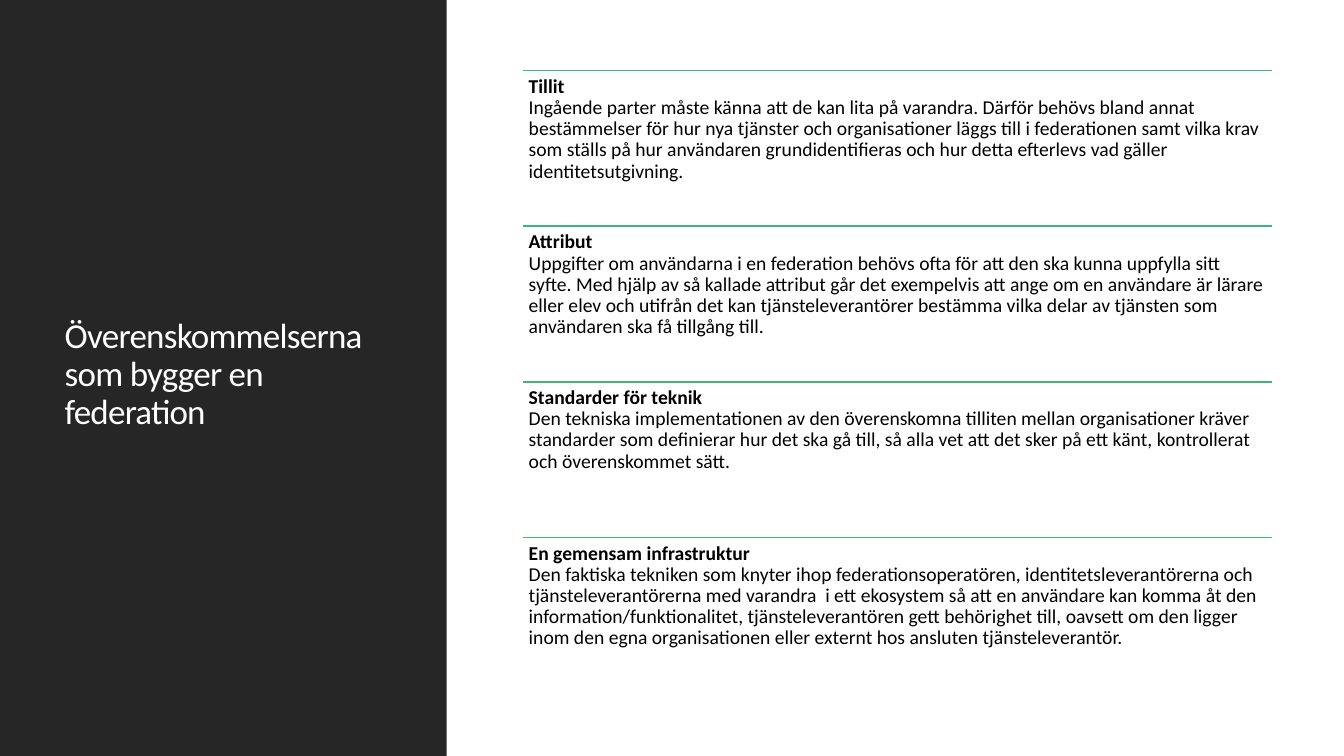
from dataclasses import dataclass

from lxml.etree import SubElement
from pptx import Presentation
from pptx.dml.color import RGBColor
from pptx.enum.shapes import MSO_CONNECTOR as Connector, MSO_SHAPE as Shape
from pptx.enum.text import MSO_ANCHOR as Anchor, MSO_AUTO_SIZE as AutoSize, PP_ALIGN as Align
from pptx.oxml.ns import qn
from pptx.util import Pt


@dataclass(frozen=True)
class Theme:
    font: str = "Calibri"
    dark: RGBColor = RGBColor.from_string("262626")
    white: RGBColor = RGBColor.from_string("FFFFFF")
    black: RGBColor = RGBColor.from_string("000000")
    rules: tuple = ("3BB192", "3FB284", "43B477", "47B56A")
    title_size: Pt = Pt(25)
    body_size: Pt = Pt(14)


theme = Theme()

agreements = [
    ("Tillit",
     "Ingående parter måste känna att de kan lita på varandra. Därför behövs bland annat "
     "bestämmelser för hur nya tjänster och organisationer läggs till i federationen samt "
     "vilka krav som ställs på hur användaren grundidentifieras och hur detta efterlevs "
     "vad gäller identitetsutgivning."),
    ("Attribut",
     "Uppgifter om användarna i en federation behövs ofta för att den ska kunna uppfylla "
     "sitt syfte. Med hjälp av så kallade attribut går det exempelvis att ange om en "
     "användare är lärare eller elev och utifrån det kan tjänsteleverantörer bestämma "
     "vilka delar av tjänsten som användaren ska få tillgång till."),
    ("Standarder för teknik",
     "Den tekniska implementationen av den överenskomna tilliten mellan organisationer "
     "kräver standarder som definierar hur det ska gå till, så alla vet att det sker på "
     "ett känt, kontrollerat och överenskommet sätt."),
    ("En gemensam infrastruktur",
     "Den faktiska tekniken som knyter ihop federationsoperatören, "
     "identitetsleverantörerna och tjänsteleverantörerna med varandra  i ett ekosystem så "
     "att en användare kan komma åt den information/funktionalitet, tjänsteleverantören "
     "gett behörighet till, oavsett om den ligger inom den egna organisationen eller "
     "externt hos ansluten tjänsteleverantör."),
]


def add_run(paragraph, text, size, color, bold=False):
    run = paragraph.add_run()
    run.text = text
    for attribute, value in {"name": theme.font, "size": size, "bold": bold}.items():
        setattr(run.font, attribute, value)
    run.font.color.rgb = color
    return run


def format_frame(frame, **settings):
    for attribute, value in {"word_wrap": True, "auto_size": AutoSize.NONE, **settings}.items():
        setattr(frame, attribute, value)
    frame.paragraphs[0].alignment = Align.LEFT
    frame.paragraphs[0].line_spacing = 0.9


deck = Presentation()
deck.slide_width, deck.slide_height = Pt(960), Pt(540)
slide = deck.slides.add_slide(deck.slide_layouts[5])

# Dark side panel, with the title in front of it
panel = slide.shapes.add_shape(Shape.RECTANGLE, 0, 0, Pt(319), deck.slide_height)
panel.shadow.inherit = False
panel.fill.solid()
panel.fill.fore_color.rgb = theme.dark
panel.line.fill.background()

title = slide.shapes.title
panel._element.addnext(title._element)
title_place = {"left": Pt(39), "top": Pt(41), "width": Pt(243), "height": Pt(454)}
for attribute, value in title_place.items():
    setattr(title, attribute, value)
format_frame(title.text_frame, vertical_anchor=Anchor.MIDDLE)
heading = add_run(title.text_frame.paragraphs[0], "Överenskommelserna som bygger en federation",
                  theme.title_size, theme.white)
heading.font._element.set("spc", "-50")

# One ruled section per agreement
left, first_top, width, pitch = 373.5, 50.4, 535, 111.15
inset = Pt(4.2)
insets = {f"margin_{side}": inset for side in ("left", "top", "right", "bottom")}

for index, ((name, description), rule_color) in enumerate(zip(agreements, theme.rules)):
    top = Pt(first_top + index * pitch)
    rule = slide.shapes.add_connector(Connector.STRAIGHT, Pt(left), top, Pt(left + width), top)
    rule.line.color.rgb = RGBColor.from_string(rule_color)
    rule.line.width = Pt(1.25)
    SubElement(rule._element.spPr, qn("a:effectLst"))

    section = slide.shapes.add_textbox(Pt(left), top, Pt(width), Pt(pitch))
    format_frame(section.text_frame, vertical_anchor=Anchor.TOP, **insets)
    paragraph = section.text_frame.paragraphs[0]
    paragraph.space_after = Pt(5)
    add_run(paragraph, name, theme.body_size, theme.black, bold=True)
    paragraph.add_line_break()
    add_run(paragraph, description, theme.body_size, theme.black)

deck.save("out.pptx")
